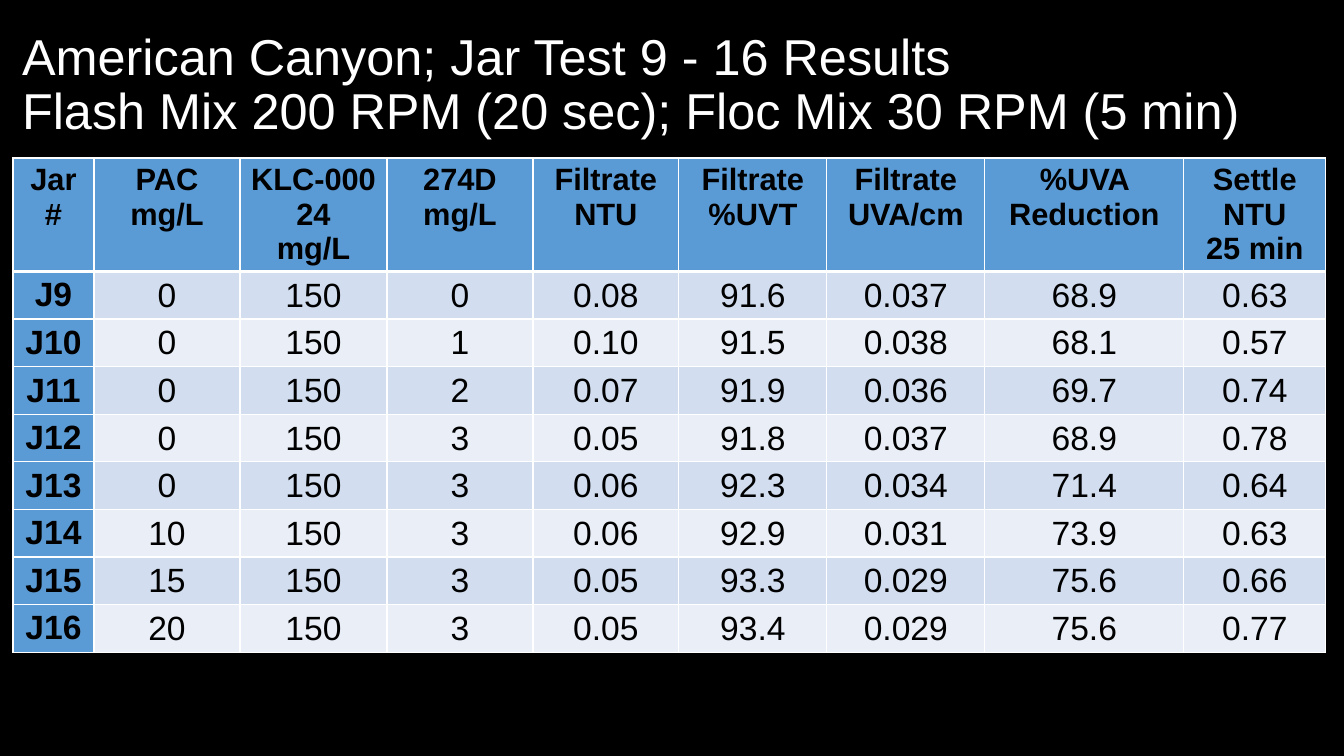
import dataclasses
import typing

import lxml.etree
import pptx
import pptx.dml.color
import pptx.enum.text
import pptx.oxml.ns
import pptx.util

EMU_PER_INCH = 914400
PX_PER_INCH = 100.8
FONT = "Arial"
WHITE, BLACK, BLUE = "FFFFFF", "000000", "5B9BD5"
BANDS = ("D2DEEF", "EAEFF7")
HEADER_HEIGHT, ROW_HEIGHT = 113, 47
MIDDLE = pptx.enum.text.MSO_ANCHOR.MIDDLE
TOP = pptx.enum.text.MSO_ANCHOR.TOP
CENTER = pptx.enum.text.PP_ALIGN.CENTER
LEFT = pptx.enum.text.PP_ALIGN.LEFT

TITLE_LINES = (
    "American Canyon; Jar Test 9 - 16 Results",
    "Flash Mix 200 RPM (20 sec); Floc Mix 30 RPM (5 min)",
)


@dataclasses.dataclass
class Column:
    width: int
    heading: tuple[str, ...]
    values: tuple[str, ...]


@dataclasses.dataclass
class CellStyle:
    fill: str
    size: int
    bold: bool
    anchor: typing.Any
    top_line: int = 1
    bottom_line: int = 1
    tight: bool = False


COLUMNS = (
    Column(81, ("Jar#",), tuple(f"J{jar}" for jar in range(9, 17))),
    Column(146, ("PAC", "mg/L"), ("0", "0", "0", "0", "0", "10", "15", "20")),
    Column(147, ("KLC-00024", "mg/L"), ("150",) * 8),
    Column(146, ("274D", "mg/L"), ("0", "1", "2", "3", "3", "3", "3", "3")),
    Column(146, ("Filtrate", "NTU"),
           ("0.08", "0.10", "0.07", "0.05", "0.06", "0.06", "0.05", "0.05")),
    Column(148, ("Filtrate", "%UVT"),
           ("91.6", "91.5", "91.9", "91.8", "92.3", "92.9", "93.3", "93.4")),
    Column(158, ("Filtrate", "UVA/cm"),
           ("0.037", "0.038", "0.036", "0.037", "0.034", "0.031", "0.029", "0.029")),
    Column(199, ("%UVA Reduction",),
           ("68.9", "68.1", "69.7", "68.9", "71.4", "73.9", "75.6", "75.6")),
    Column(142, ("Settle", "NTU", "25 min"),
           ("0.63", "0.57", "0.74", "0.78", "0.64", "0.63", "0.66", "0.77")),
)


def px(length: int) -> int:
    return round(length * EMU_PER_INCH / PX_PER_INCH)


def color(value: str) -> pptx.dml.color.RGBColor:
    return pptx.dml.color.RGBColor.from_string(value)


def apply(target: typing.Any, values: dict[str, typing.Any]) -> None:
    for name, value in values.items():
        setattr(target, name, value)


def format_font(font: typing.Any, size: int, ink: str, bold: bool = False) -> None:
    apply(font, {"name": FONT, "size": pptx.util.Pt(size), "bold": bold})
    font.color.rgb = color(ink)


def add_borders(cell: typing.Any, style: CellStyle) -> None:
    properties = cell._tc.get_or_add_tcPr()
    widths = {"lnL": 1, "lnR": 1, "lnT": style.top_line, "lnB": style.bottom_line}
    for side, width in widths.items():
        line = lxml.etree.SubElement(properties, pptx.oxml.ns.qn(f"a:{side}"),
                                     w=str(pptx.util.Pt(width)))
        solid = lxml.etree.SubElement(line, pptx.oxml.ns.qn("a:solidFill"))
        lxml.etree.SubElement(solid, pptx.oxml.ns.qn("a:srgbClr"), val=WHITE)


def fill_cell(cell: typing.Any, lines: tuple[str, ...], style: CellStyle) -> None:
    add_borders(cell, style)
    cell.fill.solid()
    cell.fill.fore_color.rgb = color(style.fill)
    cell.vertical_anchor = style.anchor
    if style.tight:
        apply(cell, {"margin_left": px(1), "margin_right": px(1),
                     "margin_top": px(1), "margin_bottom": 0})
    frame = cell.text_frame
    for index, line in enumerate(lines):
        para = frame.add_paragraph() if index else frame.paragraphs[0]
        para.alignment = CENTER
        span = para.add_run()
        span.text = line
        format_font(span.font, style.size, BLACK, style.bold)


def add_title(page: typing.Any) -> None:
    box = page.shapes.title
    apply(box, {"left": px(12), "top": px(13), "width": px(1313), "height": px(146)})
    apply(box.text_frame, {"word_wrap": True, "vertical_anchor": MIDDLE,
                           "auto_size": pptx.enum.text.MSO_AUTO_SIZE.NONE})
    para = box.text_frame.paragraphs[0]
    apply(para, {"alignment": LEFT, "line_spacing": 0.9})
    for index, line in enumerate(TITLE_LINES):
        if index:
            para.add_line_break()
        span = para.add_run()
        span.text = line
        format_font(span.font, 36, WHITE)


def add_results(page: typing.Any) -> None:
    row_count = len(COLUMNS[0].values)
    width = sum(column.width for column in COLUMNS)
    height = HEADER_HEIGHT + row_count * ROW_HEIGHT
    table = page.shapes.add_table(row_count + 1, len(COLUMNS), px(13), px(158),
                                  px(width), px(height)).table
    apply(table, {"first_row": False, "horz_banding": False})
    for index, row in enumerate(table.rows):
        row.height = px(ROW_HEIGHT if index else HEADER_HEIGHT)

    heading_style = CellStyle(BLUE, 22, True, TOP, bottom_line=3)
    for place, column in enumerate(COLUMNS):
        table.columns[place].width = px(column.width)
        fill_cell(table.cell(0, place), column.heading, heading_style)
        for index, value in enumerate(column.values):
            top_line = 1 if index else 3
            if place == 0:
                style = CellStyle(BLUE, 24, True, TOP, top_line)
            else:
                style = CellStyle(BANDS[index % 2], 24, False, MIDDLE, top_line, tight=True)
            fill_cell(table.cell(index + 1, place), (value,), style)


def main() -> None:
    deck = pptx.Presentation()
    apply(deck, {"slide_width": px(1344), "slide_height": px(756)})
    page = deck.slides.add_slide(deck.slide_layouts.get_by_name("Title Only"))

    # Black background
    page.background.fill.solid()
    page.background.fill.fore_color.rgb = color(BLACK)

    # Title and jar test table
    add_title(page)
    add_results(page)
    deck.save("out.pptx")


if __name__ == "__main__":
    main()
